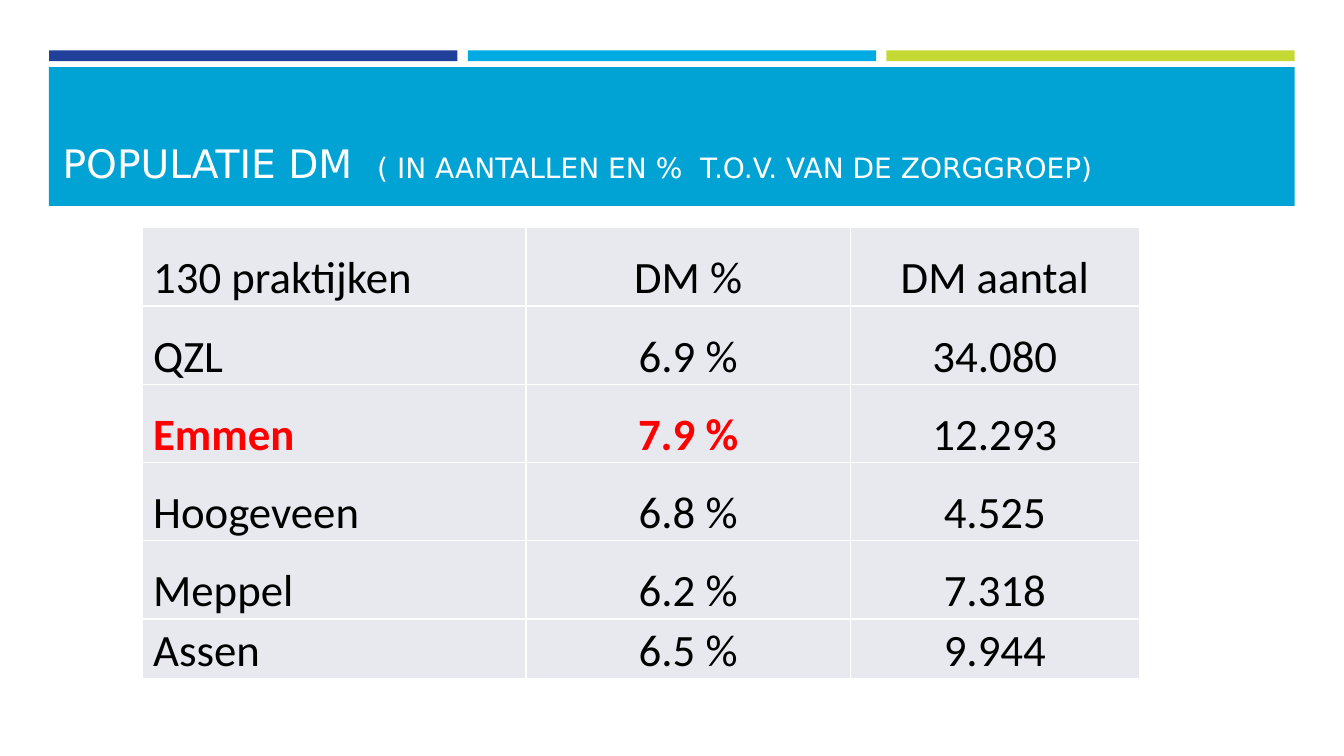
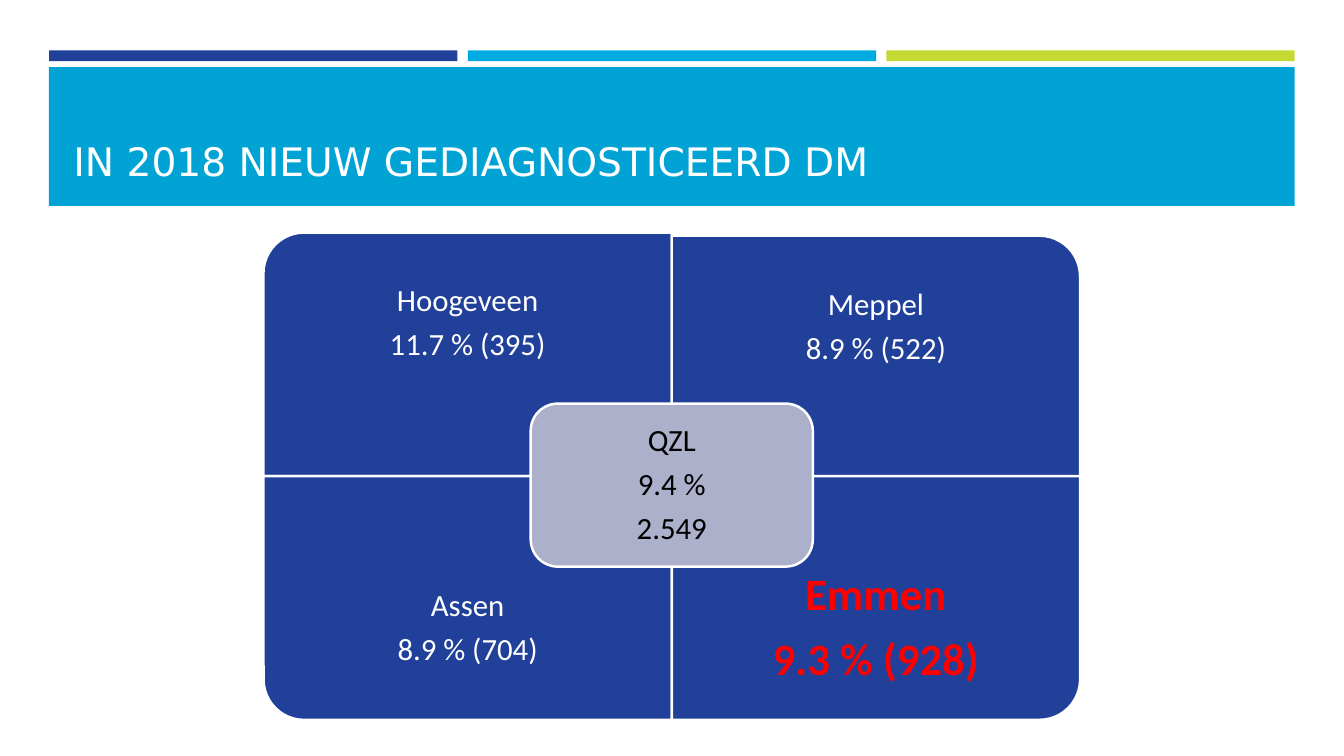
from typing import NamedTuple

from lxml.etree import SubElement
from pptx import Presentation
from pptx.dml.color import RGBColor
from pptx.enum.shapes import MSO_SHAPE as SHAPE
from pptx.enum.text import MSO_ANCHOR as ANCHOR, PP_ALIGN as ALIGN
from pptx.oxml.ns import qn
from pptx.util import Cm, Pt

NAVY = RGBColor(0x21, 0x40, 0x9A)
SKY = RGBColor(0x00, 0xAB, 0xE3)
LIME = RGBColor(0xC4, 0xD9, 0x34)
BAND = RGBColor(0x00, 0xA3, 0xD4)
CELL = RGBColor(0xE8, 0xE8, 0xEF)
HUB = RGBColor(0xAC, 0xB0, 0xCA)
WHITE = RGBColor(0xFF, 0xFF, 0xFF)
BLACK = RGBColor(0x00, 0x00, 0x00)
RED = RGBColor(0xFF, 0x00, 0x00)

TITLE_FONT = "DejaVu Sans"
BODY_FONT = "Calibri"
CARE_GROUP = "QZL"


class Box(NamedTuple):
    x: float
    y: float
    w: float
    h: float

    def emu(self):
        return [Cm(v) for v in self]


HEADER = Box(1.23, 1.27, 31.4, 3.92)
TABLE = Box(3.58, 5.74, 25.14, 11.36)
MATRIX = Box(6.64, 5.86, 20.58, 12.28)


def style_font(font, name, size, color, bold=False):
    font.name, font.size, font.bold = name, Pt(size), bold
    font.color.rgb = color


def set_margins(tf, margin):
    tf.margin_left = tf.margin_right = Cm(margin)
    tf.margin_top = tf.margin_bottom = Cm(margin)


def add_panel(s, kind, box, fill, line=None):
    sp = s.shapes.add_shape(kind, *box.emu())
    sp.shadow.inherit = False
    sp.fill.solid()
    sp.fill.fore_color.rgb = fill
    if line is None:
        sp.line.fill.background()
    else:
        sp.line.color.rgb = line
        sp.line.width = Pt(1.75)
    return sp


def add_header(s, box, runs, dx=0.1, dy=0.8):
    bar_w, pitch = 10.29, 10.55
    for i, color in enumerate((NAVY, SKY, LIME)):
        add_panel(s, SHAPE.RECTANGLE, Box(box.x + 0.01 + i * pitch, box.y, bar_w, 0.27), color)
    add_panel(s, SHAPE.RECTANGLE, Box(box.x, box.y + 0.42, box.w, box.h - 0.42), BAND)
    title = s.shapes.add_textbox(*Box(box.x + dx, box.y + dy, 30.63, 2.74).emu())
    tf = title.text_frame
    tf.word_wrap = True
    tf.vertical_anchor = ANCHOR.BOTTOM
    p = tf.paragraphs[0]
    for text, size in runs:
        r = p.add_run()
        r.text = text
        style_font(r.font, TITLE_FONT, size, WHITE)


def set_borders(cell):
    tc_pr = cell._tc.get_or_add_tcPr()
    for i, side in enumerate(("lnL", "lnR", "lnT", "lnB")):
        ln = tc_pr.makeelement(qn(f"a:{side}"), {"w": str(Pt(1))})
        fill = SubElement(ln, qn("a:solidFill"))
        SubElement(fill, qn("a:srgbClr"), val=str(WHITE))
        tc_pr.insert(i, ln)


def fill_cell(cell, text, first_col, marked):
    cell.fill.solid()
    cell.fill.fore_color.rgb = CELL
    cell.vertical_anchor = ANCHOR.BOTTOM
    cell.margin_left = Cm(0.28 if first_col else 0.02)
    cell.margin_right = cell.margin_top = Cm(0.02)
    cell.margin_bottom = 0
    cell.text = text
    p = cell.text_frame.paragraphs[0]
    p.alignment = ALIGN.LEFT if first_col else ALIGN.CENTER
    style_font(p.font, BODY_FONT, 32, RED if marked else BLACK, marked)
    set_borders(cell)


def add_population_table(s, box, rows, marked):
    table = s.shapes.add_table(len(rows), len(rows[0]), *box.emu()).table
    table.first_row = table.horz_banding = False
    for col, share in zip(table.columns, (0.385, 0.325, 0.29)):
        col.width = Cm(box.w * share)
    last_h = 1.5
    for row in table.rows:
        row.height = Cm((box.h - last_h) / (len(rows) - 1))
    table.rows[len(rows) - 1].height = Cm(last_h)
    for i, row in enumerate(rows):
        for j, text in enumerate(row):
            fill_cell(table.cell(i, j), text, j == 0, (i, j) in marked)


def write_centred(tf, lines, size, color, margin, bold=False):
    tf.word_wrap = True
    tf.vertical_anchor = ANCHOR.MIDDLE
    set_margins(tf, margin)
    tf.text = "\n".join(lines)
    for p in tf.paragraphs:
        p.alignment = ALIGN.CENTER
        p.line_spacing = 0.9
        p.space_after = Pt(size * 0.35)
        style_font(p.font, BODY_FONT, size, color, bold)


def add_quadrant(s, box, rotation, lower, lines, marked):
    frame = box
    if rotation % 180:
        frame = Box(box.x + (box.w - box.h) / 2, box.y + (box.h - box.w) / 2, box.h, box.w)
    add_panel(s, SHAPE.ROUND_1_RECTANGLE, frame, NAVY, WHITE).rotation = rotation
    text_h = box.h * 0.75
    text_y = box.y + box.h - text_h if lower else box.y
    label = s.shapes.add_textbox(*Box(box.x, text_y, box.w, text_h).emu())
    if marked:
        write_centred(label.text_frame, lines, 32, RED, 0.63, True)
    else:
        write_centred(label.text_frame, lines, 22, WHITE, 0.43)


def add_matrix(s, box, quadrants, hub_lines, marked):
    w, h = box.w / 2, box.h / 2
    for col, row, dy, rotation, lines in quadrants:
        cell = Box(box.x + col * w, box.y + row * h + dy, w, h)
        add_quadrant(s, cell, rotation, row == 1, lines, lines[0] == marked)
    hub_w, hub_h = 7.11, 4.11
    hub = Box(box.x + w - hub_w / 2, box.y + 4.31, hub_w, hub_h)
    sp = add_panel(s, SHAPE.ROUNDED_RECTANGLE, hub, HUB, WHITE)
    write_centred(sp.text_frame, hub_lines, 22, BLACK, 0.23)


def population_slide(prs):
    s = prs.slides.add_slide(prs.slide_layouts[6])
    add_header(s, HEADER, [
        ("POPULATIE DM  ", 28),
        ("( IN AANTALLEN EN %  T.O.V. VAN DE ZORGGROEP)", 20),
    ])
    rows = [
        ("130 praktijken", "DM %", "DM aantal"),
        (CARE_GROUP, "6.9 %", "34.080"),
        ("Emmen", "7.9 %", "12.293"),
        ("Hoogeveen", "6.8 %", "4.525"),
        ("Meppel", "6.2 %", "7.318"),
        ("Assen", "6.5 %", "9.944"),
    ]
    add_population_table(s, TABLE, rows, {(2, 0), (2, 1)})


def new_diagnoses_slide(prs):
    s = prs.slides.add_slide(prs.slide_layouts[6])
    add_header(s, HEADER, [("IN 2018 NIEUW GEDIAGNOSTICEERD DM", 28)], dx=0.37, dy=0.76)
    quadrants = [
        (0, 0, 0, 270, ("Hoogeveen", "11.7 % (395)")),
        (1, 0, 0.08, 0, ("Meppel", "8.9 % (522)")),
        (0, 1, 0, 180, ("Assen", "8.9 % (704)")),
        (1, 1, 0, 90, ("Emmen", "9.3 % (928)")),
    ]
    add_matrix(s, MATRIX, quadrants, (CARE_GROUP, "9.4 %", "2.549"), "Emmen")


def main():
    prs = Presentation()
    prs.slide_width, prs.slide_height = Cm(33.87), Cm(19.05)
    population_slide(prs)
    new_diagnoses_slide(prs)
    prs.save("out.pptx")


if __name__ == "__main__":
    main()
